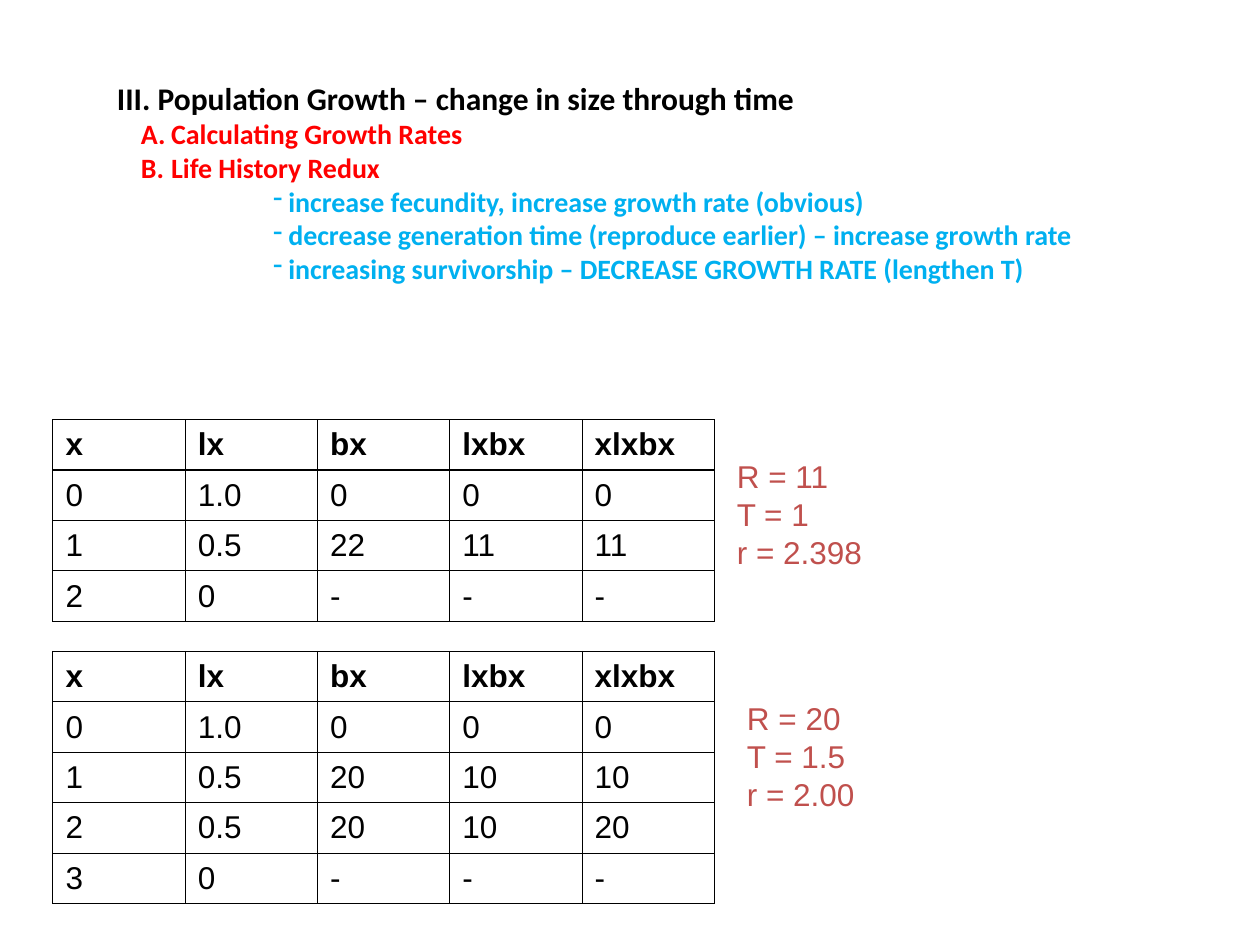
from pptx import Presentation
from pptx.dml.color import RGBColor
from pptx.enum.text import MSO_ANCHOR as Anchor
from pptx.oxml import parse_xml
from pptx.oxml.ns import nsdecls
from pptx.util import Inches, Pt

BLACK = RGBColor(0x00, 0x00, 0x00)
RED = RGBColor(0xFF, 0x00, 0x00)
BLUE = RGBColor(0x00, 0xB0, 0xF0)
BRICK = RGBColor(0xC0, 0x50, 0x4D)

LETTERED = '<a:buAutoNum {} type="alphaUcPeriod"/>'
DASHED = '<a:buChar {} char="-"/>'


def write(paragraph, text, size=18, font="Arial", color=BLACK, bold=False,
          bullet=None, left=0, hanging=0):
    """Fill one paragraph; left and hanging are indents in inches."""
    if bullet:
        props = paragraph._p.get_or_add_pPr()
        props.set("marL", str(Inches(left)))
        props.set("indent", str(-Inches(hanging)))
        props.append(parse_xml(bullet.format(nsdecls("a"))))
    run = paragraph.add_run()
    run.text = text
    run.font.size = Pt(size)
    run.font.name = font
    run.font.color.rgb = color
    run.font.bold = bold


class LifeTableSlide:
    COLUMN_WIDTH = 1.05
    ROW_HEIGHT = 0.4
    BORDER_WIDTH = Pt(0.75)

    def __init__(self, slide):
        self.slide = slide

    def text(self, left, top, width, height, lines):
        """Add a text box from (text, format) pairs."""
        box = self.slide.shapes.add_textbox(
            Inches(left), Inches(top), Inches(width), Inches(height))
        frame = box.text_frame
        frame.word_wrap = True
        for index, (line, style) in enumerate(lines):
            paragraph = frame.add_paragraph() if index else frame.paragraphs[0]
            write(paragraph, line, **style)

    def border(self, cell):
        props = cell._tc.get_or_add_tcPr()
        for position, side in enumerate("LRTB"):
            props.insert(position, parse_xml(
                f'<a:ln{side} {nsdecls("a")} w="{self.BORDER_WIDTH}">'
                f'<a:solidFill><a:srgbClr val="{BLACK}"/></a:solidFill>'
                f'</a:ln{side}>'))

    def table(self, left, top, rows):
        """Add a bordered table whose first row is bold."""
        columns = len(rows[0])
        table = self.slide.shapes.add_table(
            len(rows), columns, Inches(left), Inches(top),
            Inches(self.COLUMN_WIDTH * columns),
            Inches(self.ROW_HEIGHT * len(rows))).table
        table.first_row = table.horz_banding = False
        for r, values in enumerate(rows):
            for c, value in enumerate(values):
                cell = table.cell(r, c)
                cell.vertical_anchor = Anchor.MIDDLE
                cell.fill.background()
                self.border(cell)
                write(cell.text_frame.paragraphs[0], value, bold=r == 0)


def main():
    prs = Presentation()
    prs.slide_width, prs.slide_height = Inches(10), Inches(7.5)
    page = LifeTableSlide(prs.slides.add_slide(prs.slide_layouts[6]))

    # Outline
    heading = dict(font="Calibri", bold=True)
    topic = dict(heading, size=16, color=RED,
                 bullet=LETTERED, left=0.43, hanging=0.24)
    point = dict(heading, size=16, color=BLUE,
                 bullet=DASHED, left=1.36, hanging=0.12)
    page.text(0.83, 0.58, 8.58, 3.53, [
        ("III. Population Growth – change in size through time", heading),
        ("Calculating Growth Rates", topic),
        ("Life History Redux", topic),
        ("increase fecundity, increase growth rate (obvious)", point),
        ("decrease generation time (reproduce earlier) – increase growth rate",
         point),
        ("increasing survivorship – DECREASE GROWTH RATE (lengthen T)", point),
    ])

    # Life tables
    header = ["x", "lx", "bx", "lxbx", "xlxbx"]
    newborns = ["0", "1.0", "0", "0", "0"]
    page.table(0.42, 3.33, [
        header,
        newborns,
        ["1", "0.5", "22", "11", "11"],
        ["2", "0", "-", "-", "-"],
    ])
    page.table(0.42, 5.17, [
        header,
        newborns,
        ["1", "0.5", "20", "10", "10"],
        ["2", "0.5", "20", "10", "20"],
        ["3", "0", "-", "-", "-"],
    ])

    # Growth rates beside each table
    for left, top, rates in [
        (5.75, 3.58, ["R = 11", "T = 1", "r = 2.398"]),
        (5.83, 5.5, ["R = 20", "T = 1.5", "r = 2.00"]),
    ]:
        page.text(left, top, 3.83, 1,
                  [(rate, dict(color=BRICK)) for rate in rates])

    prs.save("out.pptx")


if __name__ == "__main__":
    main()
